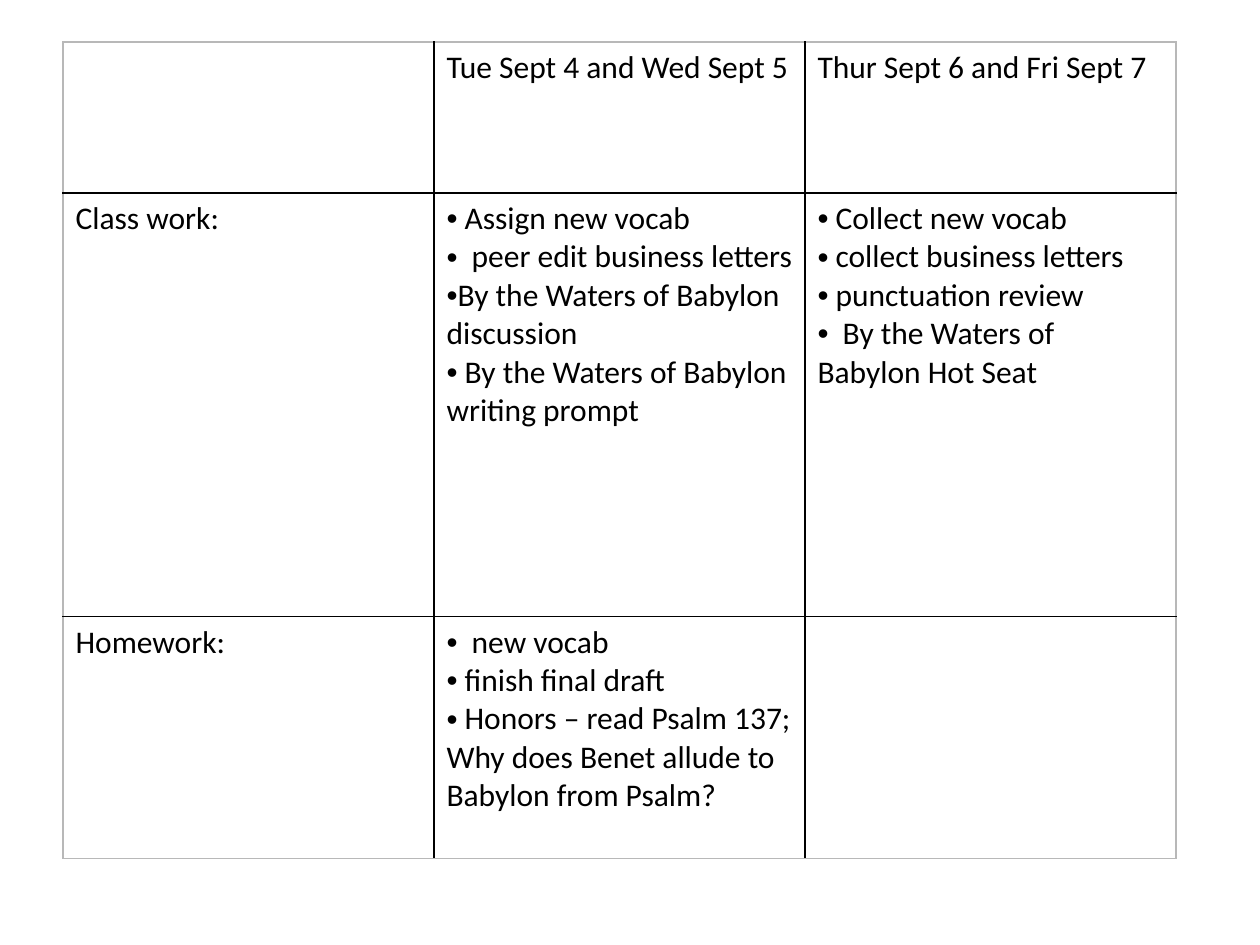
"""Build a weekly plan slide with a table of class work and homework."""
import pptx
import pptx.dml.color
import pptx.oxml
import pptx.oxml.ns
import pptx.util

Pt = pptx.util.Pt
BLACK = pptx.dml.color.RGBColor(0x00, 0x00, 0x00)
GREY = pptx.dml.color.RGBColor(0xB8, 0xB8, 0xB8)
FONT = "Calibri"
WIDTH = 212
HEIGHTS = [86.4, 242, 138.2]
PLAN = [
    [[], ["Tue Sept 4 and Wed Sept 5"], ["Thur Sept 6 and Fri Sept 7"]],
    [
        ["Class work:"],
        [
            " Assign new vocab",
            "  peer edit business letters",
            "By the Waters of Babylon discussion",
            " By the Waters of Babylon writing prompt",
        ],
        [
            " Collect new vocab",
            " collect business letters",
            " punctuation review",
            "  By the Waters of Babylon Hot Seat",
        ],
    ],
    [
        ["Homework:"],
        [
            "  new vocab",
            " finish final draft",
            " Honors – read Psalm 137; Why does Benet allude to Babylon from Psalm?",
        ],
        [],
    ],
]


def border(cell, side, color):
    line = pptx.oxml.parse_xml(
        f'<a:ln{side} {pptx.oxml.ns.nsdecls("a")} w="{Pt(1)}">'
        f'<a:solidFill><a:srgbClr val="{color}"/></a:solidFill></a:ln{side}>'
    )
    cell._tc.get_or_add_tcPr().append(line)


def bullet(para):
    props = para._p.get_or_add_pPr()
    props.set("marL", "0")
    props.set("indent", "0")
    for mark in ('buFont typeface="Arial"', 'buChar char="•"'):
        props.append(pptx.oxml.parse_xml(f'<a:{mark} {pptx.oxml.ns.nsdecls("a")}/>'))


deck = pptx.Presentation()
deck.slide_width, deck.slide_height = Pt(720), Pt(540)
slide = deck.slides.add_slide(deck.slide_layouts[6])
frame = slide.shapes.add_table(3, 3, Pt(36), Pt(24), Pt(3 * WIDTH), Pt(sum(HEIGHTS)))
table = frame.table
table.first_row = False
table.horz_banding = False
for col in table.columns:
    col.width = Pt(WIDTH)

for r, (height, row) in enumerate(zip(HEIGHTS, PLAN)):
    table.rows[r].height = Pt(height)
    for c, lines in enumerate(row):
        cell = table.cell(r, c)
        edges = {"L": c == 0, "R": c == 2, "T": r == 0, "B": r == 2}
        for side, outer in edges.items():
            border(cell, side, GREY if outer else BLACK)
        cell.fill.background()
        for n, text in enumerate(lines):
            body = cell.text_frame
            para = body.add_paragraph() if n else body.paragraphs[0]
            if r and c:
                bullet(para)
            run = para.add_run()
            run.text = text
            run.font.name = FONT
            run.font.size = Pt(18)
            run.font.color.rgb = BLACK

deck.save("out.pptx")
